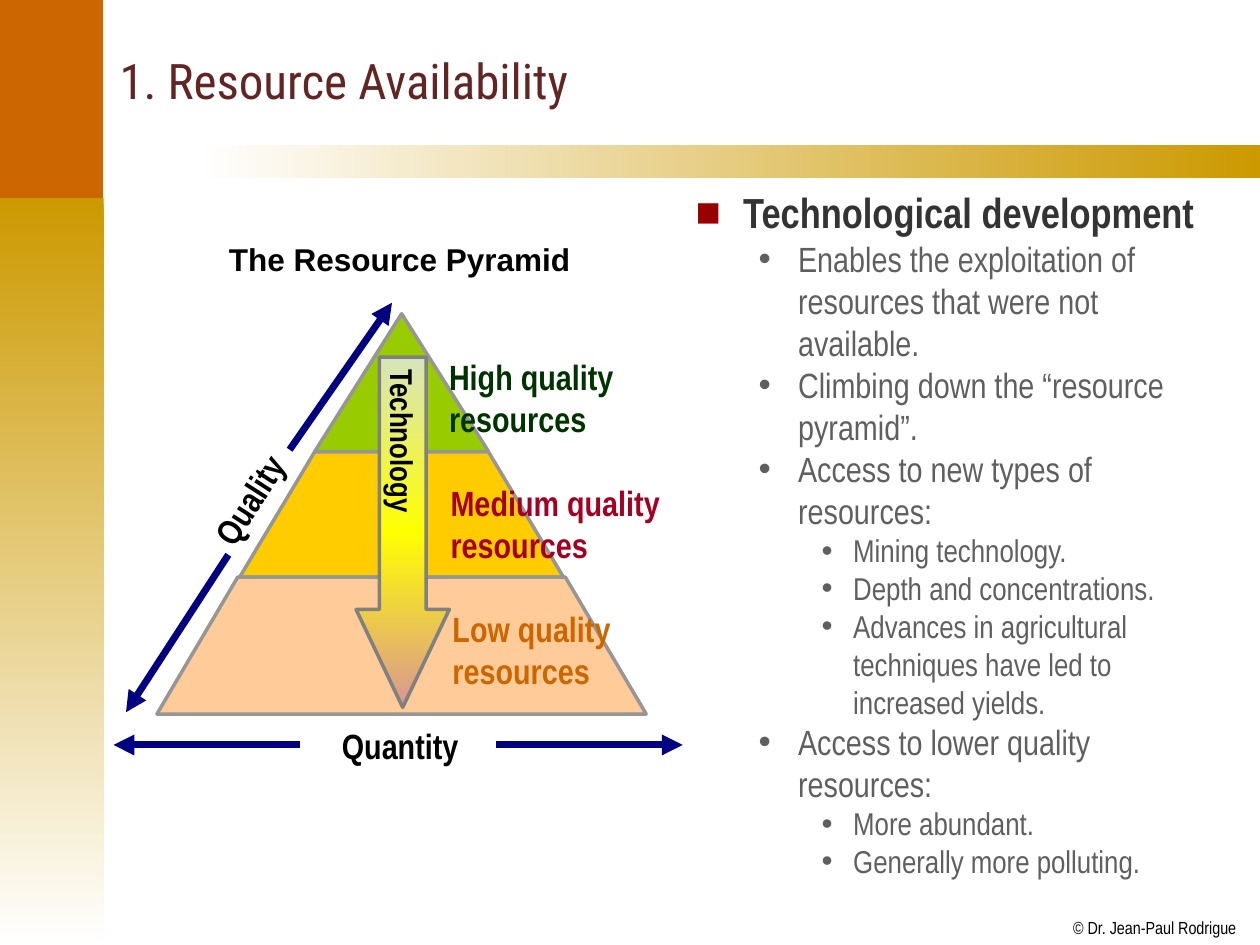
"""Build the resource availability slide with its resource pyramid."""
from lxml import etree
from pptx import Presentation
from pptx import util as u
from pptx.dml.color import RGBColor
from pptx.enum import shapes, text
from pptx.oxml.ns import qn

Pt = u.Pt
BLACK = RGBColor(0x00, 0x00, 0x00)
WHITE = RGBColor(0xFF, 0xFF, 0xFF)
GOLD = RGBColor(0xCC, 0x99, 0x00)
ORANGE = RGBColor(0xCC, 0x66, 0x00)
MAROON = RGBColor(0x63, 0x25, 0x23)
BULLET_RED = RGBColor(0x99, 0x00, 0x00)
CHARCOAL = RGBColor(0x33, 0x33, 0x33)
GREY = RGBColor(0x5F, 0x5F, 0x5F)
TIER_EDGE = RGBColor(0x96, 0x96, 0x96)
ARROW_EDGE = RGBColor(0x80, 0x80, 0x80)
NAVY = RGBColor(0x00, 0x00, 0x80)
GREEN = RGBColor(0x99, 0xCC, 0x00)
YELLOW = RGBColor(0xFF, 0xCC, 0x00)
PEACH = RGBColor(0xFF, 0xCC, 0x99)
DARK_GREEN = RGBColor(0x00, 0x33, 0x00)
CRIMSON = RGBColor(0xA5, 0x00, 0x21)
PALE_GREEN = RGBColor(0xD7, 0xE4, 0xBD)
BRIGHT_YELLOW = RGBColor(0xFF, 0xFF, 0x00)
ROSE = RGBColor(0xD9, 0x96, 0x94)
NARROW = "Arial Narrow"

deck = Presentation()
deck.slide_width, deck.slide_height = Pt(720), Pt(540)
slide = deck.slides.add_slide(deck.slide_layouts[6])


def style(shape, colors, angle=90, edge=None):
    """Fill a shape with one colour or an even gradient, and outline it."""
    shape.shadow.inherit = False
    if len(colors) == 1:
        shape.fill.solid()
        shape.fill.fore_color.rgb = colors[0]
    else:
        shape.fill.gradient()
        gradient = shape._element.spPr.find(qn("a:gradFill"))
        stops = gradient.find(qn("a:gsLst"))
        for stop in list(stops):
            stops.remove(stop)
        for i, color in enumerate(colors):
            position = str(100000 * i // (len(colors) - 1))
            stop = etree.SubElement(stops, qn("a:gs"), pos=position)
            etree.SubElement(stop, qn("a:srgbClr"), val=str(color))
        gradient.find(qn("a:lin")).set("ang", str(angle * 60000))
    if edge is None:
        shape.line.fill.background()
    else:
        shape.line.color.rgb = edge
        shape.line.width = Pt(2)


def write(box, lines, **font):
    """Put lines of text in a box, one paragraph each, in one font."""
    frame = box.text_frame
    frame.text = "\n".join(lines)
    for paragraph in frame.paragraphs:
        run_font = paragraph.runs[0].font
        run_font.color.rgb = font["color"]
        for key in ("name", "size", "bold"):
            setattr(run_font, key, font[key])
    return frame


for place, colors, angle in (
    ((-0.5, 113, 59.75, 427), (GOLD, WHITE), 90),
    ((113, 82.8, 607, 19.1), (WHITE, GOLD), 0),
    ((-0.5, -0.5, 59.5, 113.7), (ORANGE,), 0),
):
    band = slide.shapes.add_shape(shapes.MSO_SHAPE.RECTANGLE, *map(Pt, place))
    style(band, colors, angle)

title = slide.shapes.add_textbox(Pt(61.2), Pt(8.4), Pt(646.6), Pt(74.9))
title_frame = write(title, ["1. Resource Availability"], name="Roboto Condensed",
                    size=Pt(28), bold=False, color=MAROON)
title_frame.word_wrap = True
title_frame.vertical_anchor = text.MSO_ANCHOR.MIDDLE

outline = (
    (0, "Technological development"),
    (1, "Enables the exploitation of resources that were not available."),
    (1, "Climbing down the “resource pyramid”."),
    (1, "Access to new types of resources:"),
    (2, "Mining technology."),
    (2, "Depth and concentrations."),
    (2, "Advances in agricultural techniques have led to increased yields."),
    (1, "Access to lower quality resources:"),
    (2, "More abundant."),
    (2, "Generally more polluting."),
)
levels = (
    dict(size=24, color=CHARCOAL, bold=True, margin=27, hang=27, mark="■", mark_color=BULLET_RED),
    dict(size=20, color=GREY, bold=False, margin=58.5, hang=22.5, mark="•", mark_color=GREY),
    dict(size=18, color=GREY, bold=False, margin=90, hang=18, mark="•", mark_color=GREY),
)
points = slide.shapes.add_textbox(Pt(390.5), Pt(103.2), Pt(316), Pt(417)).text_frame
points.word_wrap = True
for i, (level, words) in enumerate(outline):
    look = levels[level]
    point = points.add_paragraph() if i else points.paragraphs[0]
    point.level = level
    properties = point._p.get_or_add_pPr()
    properties.set("marL", str(Pt(look["margin"])))
    properties.set("indent", str(-Pt(look["hang"])))
    mark_color = etree.SubElement(properties, qn("a:buClr"))
    etree.SubElement(mark_color, qn("a:srgbClr"), val=str(look["mark_color"]))
    etree.SubElement(properties, qn("a:buFont"), typeface="Arial")
    etree.SubElement(properties, qn("a:buChar"), char=look["mark"])
    run = point.add_run()
    run.text = words
    run.font.color.rgb = look["color"]
    for key, value in dict(name=NARROW, size=Pt(look["size"]), bold=look["bold"]).items():
        setattr(run.font, key, value)

axis = 229.5
peak = slide.shapes.add_shape(shapes.MSO_SHAPE.ISOSCELES_TRIANGLE,
                              Pt(axis - 49.7), Pt(179.3), Pt(99.4), Pt(78.8))
style(peak, (GREEN,), edge=TIER_EDGE)
for top, bottom, top_half, bottom_half, color in (
    (258.3, 329.8, 49.7, 92.5, YELLOW),
    (329.8, 408, 93.6, 139.8, PEACH),
):
    corners = [(Pt(axis + x), Pt(y)) for x, y in (
        (-bottom_half, bottom), (-top_half, top), (top_half, top), (bottom_half, bottom))]
    builder = slide.shapes.build_freeform(*corners[0])
    builder.add_line_segments(corners[1:], close=True)
    style(builder.convert_to_shape(), (color,), edge=TIER_EDGE)

technology = slide.shapes.add_shape(shapes.MSO_SHAPE.DOWN_ARROW,
                                    Pt(203.5), Pt(204), Pt(53.3), Pt(200.2))
technology.adjustments[0] = 0.5
technology.adjustments[1] = 1.05
style(technology, (PALE_GREEN, BRIGHT_YELLOW, ROSE), edge=ARROW_EDGE)
technology_frame = write(technology, ["Technology"], name=NARROW, size=Pt(18),
                         bold=True, color=BLACK)
technology_frame.word_wrap = False
technology_frame.vertical_anchor = text.MSO_ANCHOR.MIDDLE
technology_frame.paragraphs[0].alignment = text.PP_ALIGN.CENTER
technology_frame._txBody.bodyPr.set("vert", "eaVert")

for start_x, start_y, end_x, end_y in (
    (171.4, 425.7, 64.8, 425.7),
    (283.7, 425.7, 390.2, 425.7),
    (130.5, 317, 72, 407),
    (165.5, 257, 224, 173),
):
    arrow = slide.shapes.add_connector(shapes.MSO_CONNECTOR.STRAIGHT,
                                       Pt(start_x), Pt(start_y), Pt(end_x), Pt(end_y))
    arrow.line.color.rgb = NAVY
    arrow.line.width = Pt(4)
    etree.SubElement(arrow.line._get_or_add_ln(), qn("a:tailEnd"), type="triangle")
    etree.SubElement(arrow._element.spPr, qn("a:effectLst"))

for place, lines, name, size, color, turn in (
    ((188.3, 410.4, 81.4, 31.5), ["Quantity"], NARROW, 20, BLACK, 0),
    ((106.6, 268.7, 72.8, 31), ["Quality"], NARROW, 20, BLACK, 302.7),
    ((249.5, 199.4, 130.3, 55.5), ["High quality", "resources"], NARROW, 20, DARK_GREEN, 0),
    ((250.4, 271.4, 161.3, 55.5), ["Medium quality", "resources"], NARROW, 20, CRIMSON, 0),
    ((251.5, 343.4, 125.3, 55.5), ["Low quality", "resources"], NARROW, 20, ORANGE, 0),
    ((123.8, 133.5, 211.7, 28.8), ["The Resource Pyramid"], "Arial", 18, BLACK, 0),
):
    label = slide.shapes.add_textbox(*map(Pt, place))
    label.rotation = turn
    label_frame = write(label, lines, name=name, size=Pt(size), bold=True, color=color)
    label_frame.word_wrap = False
    label_frame.auto_size = text.MSO_AUTO_SIZE.SHAPE_TO_FIT_TEXT

credit = slide.shapes.add_textbox(Pt(613.2), Pt(524.2), Pt(93.6), Pt(12.2))
credit_frame = write(credit, ["© Dr. Jean-Paul Rodrigue"], name=NARROW, size=Pt(10),
                     bold=False, color=BLACK)
for key, value in dict(margin_left=0, margin_right=0, margin_top=0, margin_bottom=0,
                       word_wrap=False).items():
    setattr(credit_frame, key, value)

deck.save("out.pptx")
